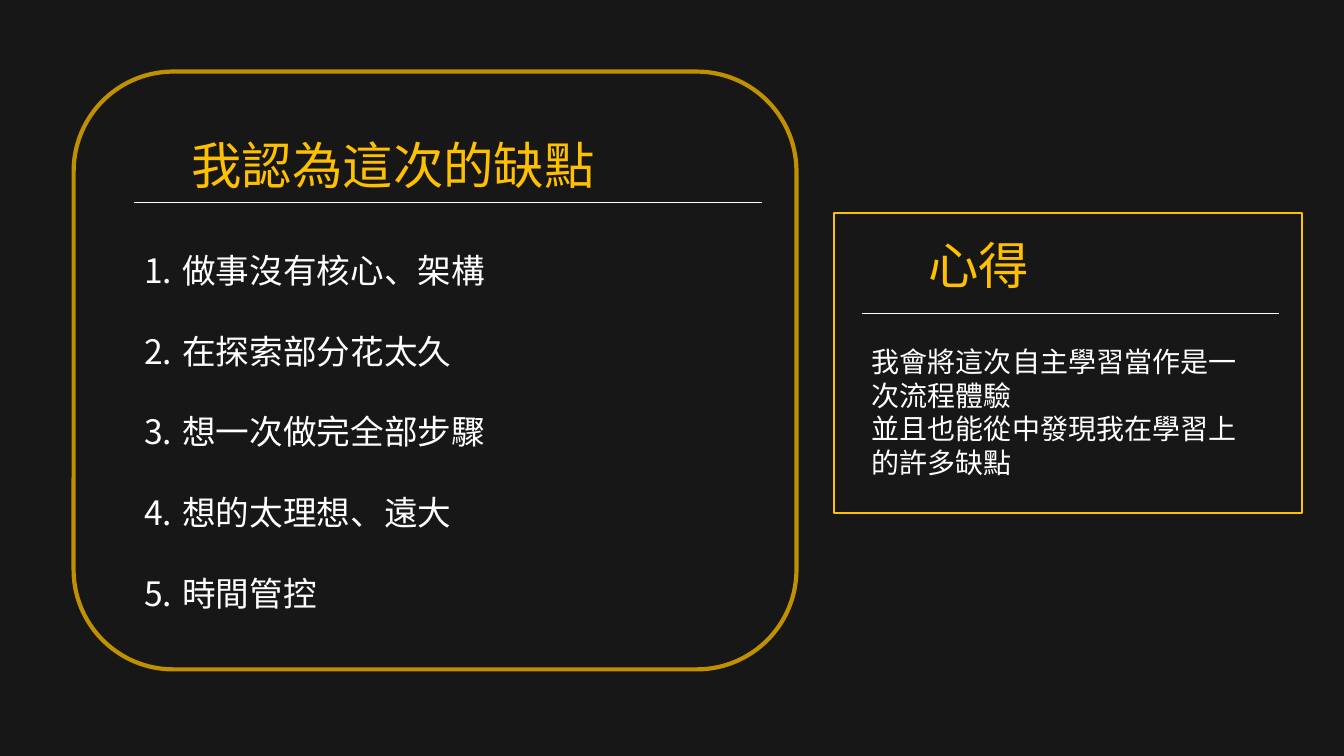
from pptx import Presentation, util as u
from pptx.dml.color import RGBColor
from pptx.enum import shapes, text
from pptx.oxml.ns import qn
from lxml import etree

FONT = "Noto Sans CJK JP"
COLORS = {"back": "181717", "gold": "FFC000", "dark_gold": "BF9000", "white": "FFFFFF"}
WIDTH, HEIGHT = 13.33, 7.5

# Places are left, top, width, height in percent of the slide's size.
PANELS = [
    {
        "outline": shapes.MSO_SHAPE.ROUNDED_RECTANGLE,
        "line": ("dark_gold", 3),
        "frame": (5.48, 9.47, 53.78, 79.07),
        "title": "我認為這次的缺點",
        "title_at": (13.5, 17.07, 37.2, 9.47),
        "rule_at": (9.98, 26.8, 46.72, 0),
        "body": ["做事沒有核心、架構", "在探索部分花太久", "想一次做完全部步驟",
                 "想的太理想、遠大", "時間管控"],
        "body_at": (9.98, 32.4, 29.1, 49.87),
        "size": 24,
        "numbered": True,
    },
    {
        "outline": shapes.MSO_SHAPE.RECTANGLE,
        "line": ("gold", 1.5),
        "frame": (62.03, 28.13, 34.88, 39.73),
        "title": "心得",
        "title_at": (68.33, 30.27, 20.78, 9.47),
        "rule_at": (64.13, 41.47, 31.05, 0),
        "body": ["我會將這次自主學習當作是一次流程體驗", "並且也能從中發現我在學習上的許多缺點"],
        "body_at": (64.13, 44.93, 29.25, 19.33),
        "size": 20,
        "numbered": False,
    },
]


def color(name):
    return RGBColor.from_string(COLORS[name])


def place(share):
    x, y, w, h = share
    return [u.Inches(v / 100 * full)
            for v, full in ((x, WIDTH), (y, HEIGHT), (w, WIDTH), (h, HEIGHT))]


def set_line(sp, name, width):
    sp.line.color.rgb = color(name)
    sp.line.width = u.Pt(width)


def number(p, size):
    """Give the paragraph an automatic number and one blank line's gap below."""
    p.space_after = u.Pt(size * 1.2)
    ppr = p._p.get_or_add_pPr()
    indent = u.Inches(0.38)
    ppr.set("marL", str(indent))
    ppr.set("indent", str(-indent))
    etree.SubElement(ppr, qn("a:buFont"), typeface="+mj-lt")
    etree.SubElement(ppr, qn("a:buAutoNum"), type="arabicPeriod")


def add_text(s, share, lines, size, name, align, numbered=False):
    tf = s.shapes.add_textbox(*place(share)).text_frame
    tf.word_wrap = True
    for i, line in enumerate(lines):
        p = tf.add_paragraph() if i else tf.paragraphs[0]
        p.alignment = align
        if numbered:
            number(p, size)
        r = p.add_run()
        r.text = line
        r.font.size = u.Pt(size)
        r.font.name = FONT
        r.font.color.rgb = color(name)
        latin = r.font._element.find(qn("a:latin"))
        latin.addnext(etree.Element(qn("a:ea"), typeface=FONT))


def add_rule(s, share):
    x, y, w, h = place(share)
    rule = s.shapes.add_connector(shapes.MSO_CONNECTOR.STRAIGHT, x, y, x + w, y + h)
    set_line(rule, "white", 0.5)
    etree.SubElement(rule._element.spPr, qn("a:effectLst"))


def add_panel(s, panel):
    frame = s.shapes.add_shape(panel["outline"], *place(panel["frame"]))
    frame.shadow.inherit = False
    frame.fill.background()
    set_line(frame, *panel["line"])
    add_text(s, panel["title_at"], [panel["title"]], 36, "gold", text.PP_ALIGN.JUSTIFY)
    add_rule(s, panel["rule_at"])
    add_text(s, panel["body_at"], panel["body"], panel["size"], "white",
             text.PP_ALIGN.LEFT, panel["numbered"])


def main():
    prs = Presentation()
    prs.slide_width, prs.slide_height = u.Inches(WIDTH), u.Inches(HEIGHT)
    s = prs.slides.add_slide(prs.slide_layouts[6])
    s.background.fill.solid()
    s.background.fill.fore_color.rgb = color("back")
    for panel in PANELS:
        add_panel(s, panel)
    prs.save("out.pptx")


if __name__ == "__main__":
    main()
